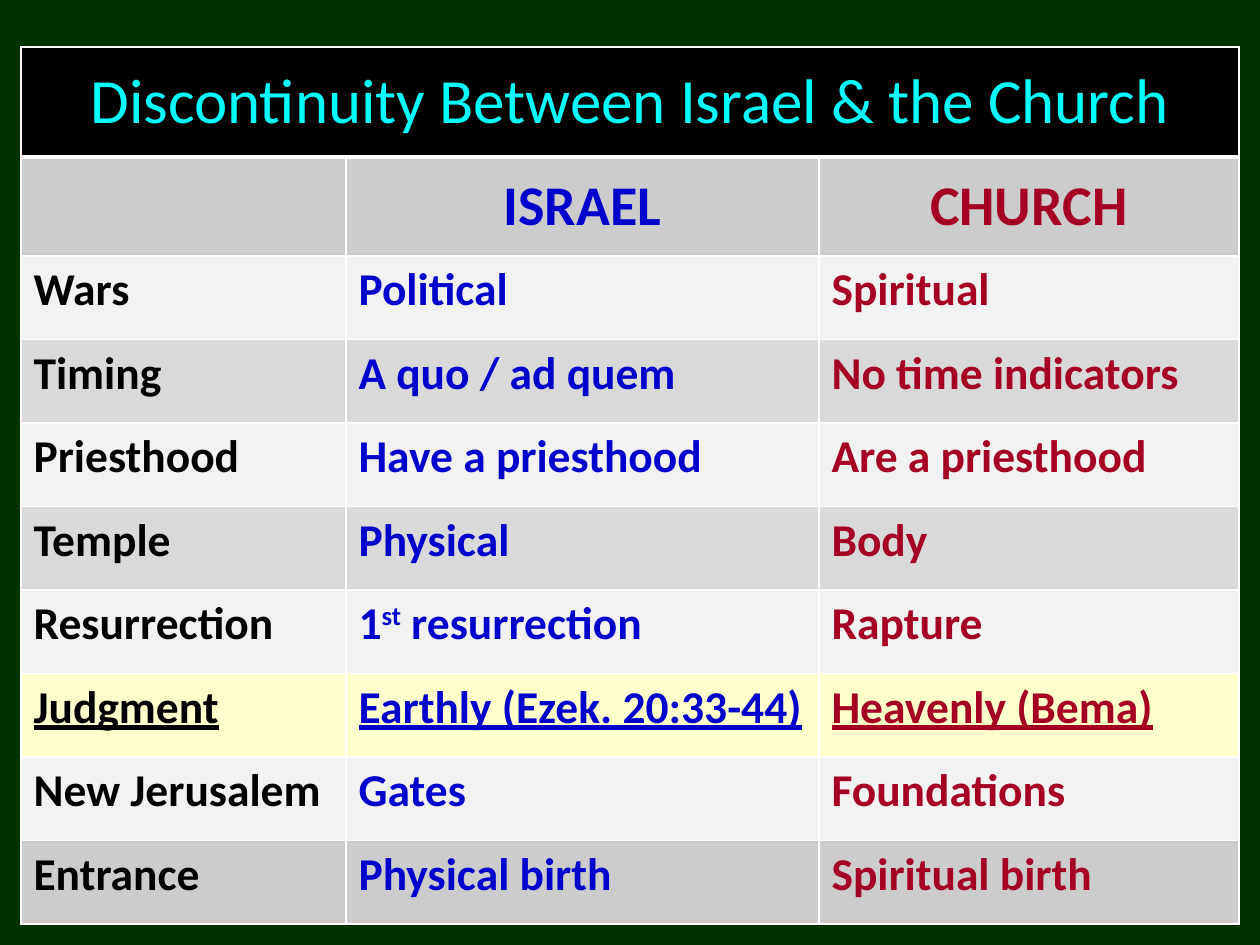
"""Build a table slide that contrasts Israel and the Church."""
import pptx
import pptx.dml.color
import pptx.enum.text
import pptx.oxml
import pptx.oxml.ns
import pptx.util

TITLE = "Discontinuity Between Israel & the Church"
HEADS = ["", "ISRAEL", "CHURCH"]
ROWS = [
    ("Wars", "Political", "Spiritual"),
    ("Timing", "A quo / ad quem", "No time indicators"),
    ("Priesthood", "Have a priesthood", "Are a priesthood"),
    ("Temple", "Physical", "Body"),
    ("Resurrection", ("1", "st", " resurrection"), "Rapture"),
    ("Judgment", "Earthly (Ezek. 20:33-44)", "Heavenly (Bema)"),
    ("New Jerusalem", "Gates", "Foundations"),
    ("Entrance", "Physical birth", "Spiritual birth"),
]
KEY = "Judgment"
HUES = {
    "back": "003300", "title": "00FFFF", "bar": "000000", "head": "CCCCCC",
    "light": "F2F2F2", "dark": "D9D9D9", "key": "FFFFCC", "edge": "FFFFFF",
    "topic": "000000", "israel": "0000CC", "church": "A50021",
}
INKS = ["topic", "israel", "church"]
FONT = "Calibri"
LEFT, TOP = 21, 47
WIDTHS = [325, 473, 420]
BODY = 668
HEIGHTS = [110, 99] + [BODY / len(ROWS)] * len(ROWS)
SCALE = 914400 / 126


def px(num):
    return pptx.util.Emu(round(num * SCALE))


def rgb(name):
    return pptx.dml.color.RGBColor.from_string(HUES[name])


def paint(cell, fill, base=1):
    props = cell._tc.get_or_add_tcPr()
    for side, wide in (("L", 1), ("R", 1), ("T", 1), ("B", base)):
        props.append(pptx.oxml.parse_xml(
            f'<a:ln{side} {pptx.oxml.ns.nsdecls("a")} w="{pptx.util.Pt(wide)}">'
            f'<a:solidFill><a:srgbClr val="{HUES["edge"]}"/></a:solidFill>'
            f'</a:ln{side}>'))
    cell.fill.solid()
    cell.fill.fore_color.rgb = rgb(fill)


def write(cell, text, ink, size, bold=True, line=False, mid=False, gap=0):
    para = cell.text_frame.paragraphs[0]
    para.space_before = para.space_after = pptx.util.Pt(gap)
    if mid:
        para.alignment = pptx.enum.text.PP_ALIGN.CENTER
        cell.vertical_anchor = pptx.enum.text.MSO_ANCHOR.MIDDLE
    for part in [text] if isinstance(text, str) else text:
        run = para.add_run()
        run.text = part
        font = run.font
        font.name, font.size = FONT, pptx.util.Pt(size)
        font.bold, font.underline = bold, line
        font.color.rgb = rgb(ink)
        if part == "st":
            run._r.get_or_add_rPr().set("baseline", "30000")


def shade(num):
    if ROWS[num][0] == KEY:
        return "key"
    if num == len(ROWS) - 1:
        return "head"
    return "dark" if num % 2 else "light"


def main():
    deck = pptx.Presentation()
    deck.slide_width, deck.slide_height = px(1260), px(945)
    slide = deck.slides.add_slide(deck.slide_layouts[6])
    slide.background.fill.solid()
    slide.background.fill.fore_color.rgb = rgb("back")
    table = slide.shapes.add_table(
        len(HEIGHTS), len(WIDTHS), px(LEFT), px(TOP),
        px(sum(WIDTHS)), px(sum(HEIGHTS))).table
    for col, wide in zip(table.columns, WIDTHS):
        col.width = px(wide)
    for row, high in zip(table.rows, HEIGHTS):
        row.height = px(high)

    title = table.cell(0, 0)
    title.merge(table.cell(0, len(WIDTHS) - 1))
    write(title, TITLE, "title", 36, bold=False, mid=True)
    for col, (head, ink) in enumerate(zip(HEADS, INKS)):
        paint(table.cell(0, col), "bar", base=3)
        cell = table.cell(1, col)
        paint(cell, "head")
        if head:
            write(cell, head, ink, 32, mid=True)
    for num, row in enumerate(ROWS):
        for col, (text, ink) in enumerate(zip(row, INKS)):
            cell = table.cell(num + 2, col)
            paint(cell, shade(num))
            write(cell, text, ink, 26, line=row[0] == KEY, gap=6)
    deck.save("out.pptx")


if __name__ == "__main__":
    main()
